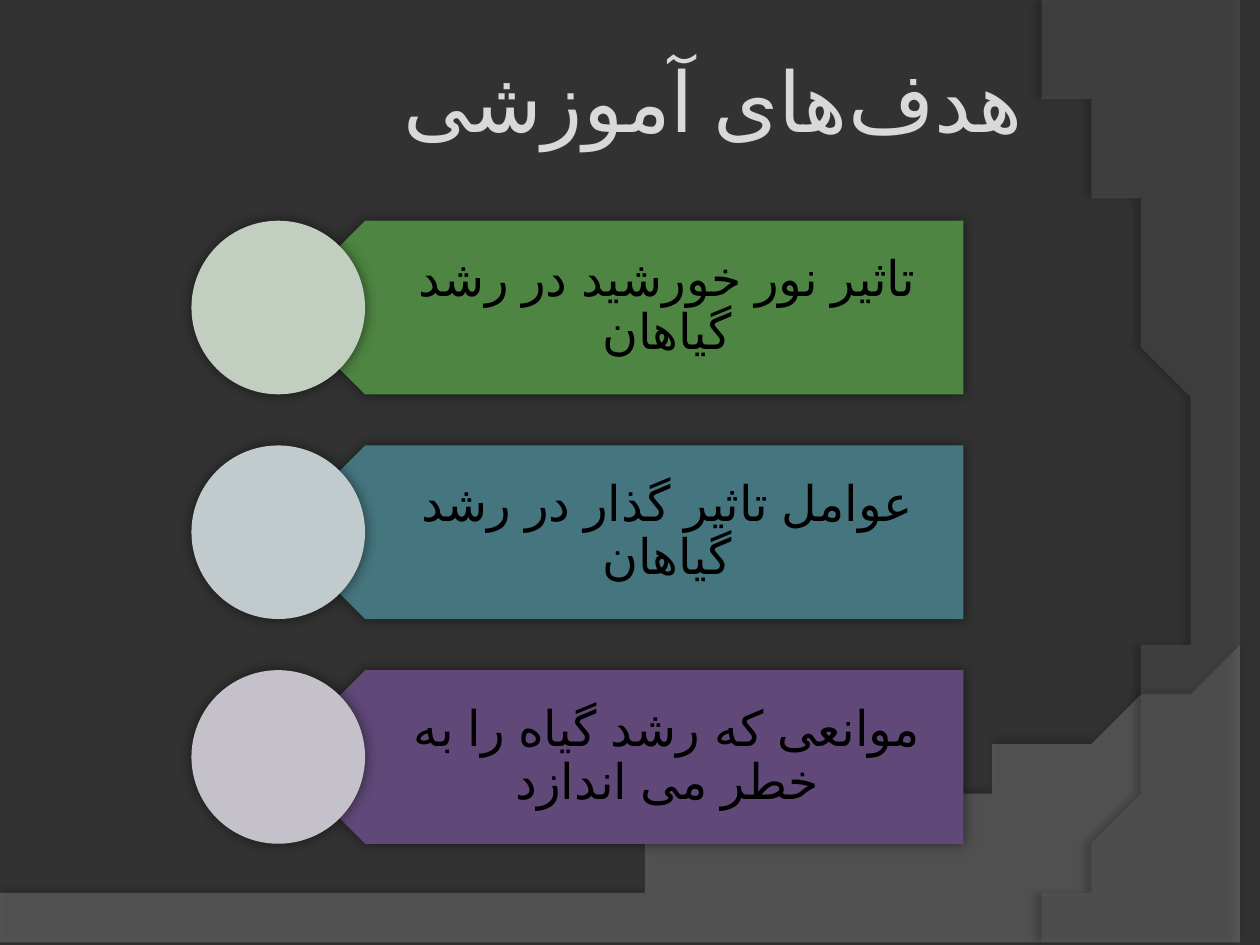
import pptx
import pptx.util
import pptx.dml.color
import pptx.enum.shapes
import pptx.enum.text
import pptx.oxml
import pptx.oxml.ns

Cm = pptx.util.Cm
SHAPE = pptx.enum.shapes.MSO_SHAPE
ALIGN = pptx.enum.text.PP_ALIGN
ANCHOR = pptx.enum.text.MSO_ANCHOR

# Content: text, arrow colour, circle colour
TITLE = "هدف\u200cهای آموزشی"
GOALS = [
    ("تاثیر نور خورشید در رشد گیاهان", "4E8542", "C2CEC0"),
    ("عوامل تاثیر گذار در رشد گیاهان", "45757E", "C1CACC"),
    ("موانعی که رشد گیاه را به خطر می اندازد", "604878", "C5C1CA"),
]
# Background waves in cm: straight corners, then a Bezier from the last corner
WAVES = [
    dict(corners=[(0, 17.91), (0, 19.07), (25.4, 19.07), (25.4, 13.21)],
         curve=[(14.2, 18.52), (9.93, 18.26), (0, 17.91)],
         color="7F7F7F", alpha=45, shadow=(35, 4, 3.5, 270)),
    dict(corners=[(25.4, 0.05), (25.4, 19.05), (20.85, 19.05)],
         curve=[(23.75, 15.72), (25.86, 7.62), (20.32, 0)],
         color="5E5E5E", alpha=40, shadow=(45, 4, 4, 180)),
]
GLOW = (50, 7.5, 0, 0)

# Goal rows in cm
TOP, PITCH, HEIGHT = 4.45, 4.53, 3.5
CIRCLE_X, ARROW_X, RIGHT = 3.86, 5.61, 19.42
TEXT_X = ARROW_X + HEIGHT / 4


def rgb(color):
    return pptx.dml.color.RGBColor.from_string(color)


def paint(sp, color, shadow, alpha=100):
    """Solid fill, no line, and a black shadow (alpha, blur, distance, angle)."""
    sp.fill.solid()
    sp.fill.fore_color.rgb = rgb(color)
    sp.line.fill.background()
    if alpha < 100:
        clr = sp.fill._xPr.find(".//" + pptx.oxml.ns.qn("a:srgbClr"))
        clr.append(pptx.oxml.parse_xml(
            f'<a:alpha {pptx.oxml.ns.nsdecls("a")} val="{alpha * 1000}"/>'))
    opacity, blur, dist, angle = shadow
    sp._element.spPr.append(pptx.oxml.parse_xml(
        f'<a:effectLst {pptx.oxml.ns.nsdecls("a")}>'
        f'<a:outerShdw blurRad="{int(blur * 12700)}" dist="{int(dist * 12700)}" '
        f'dir="{angle * 60000}" algn="ctr" rotWithShape="0"><a:srgbClr val="000000">'
        f'<a:alpha val="{opacity * 1000}"/></a:srgbClr></a:outerShdw></a:effectLst>'))


def write(sp, text, size, font, color, align, anchor, margins, spacing=1.0):
    """One right-to-left paragraph; margins are left, top, right, bottom in cm."""
    tf = sp.text_frame
    tf.word_wrap = True
    tf.auto_size = pptx.enum.text.MSO_AUTO_SIZE.NONE
    tf.vertical_anchor = anchor
    tf.margin_left, tf.margin_top, tf.margin_right, tf.margin_bottom = map(Cm, margins)
    p = tf.paragraphs[0]
    p.alignment = align
    p.line_spacing = spacing
    p._p.get_or_add_pPr().set("rtl", "1")
    r = p.add_run()
    r.text = text
    r.font.size = pptx.util.Pt(size)
    r.font.name = font
    r.font.color.rgb = rgb(color)
    r._r.get_or_add_rPr().set("lang", "fa-IR")
    r._r.rPr.append(pptx.oxml.parse_xml(
        f'<a:cs {pptx.oxml.ns.nsdecls("a")} typeface="{font}"/>'))


def bezier(points, steps=60):
    """Points along a cubic curve, without its start."""
    for i in range(1, steps + 1):
        t = i / steps
        weights = ((1 - t) ** 3, 3 * t * (1 - t) ** 2, 3 * t * t * (1 - t), t ** 3)
        yield tuple(sum(w * pt[k] for w, pt in zip(weights, points)) for k in (0, 1))


prs = pptx.Presentation()
prs.slide_width, prs.slide_height = Cm(25.4), Cm(19.05)
s = prs.slides.add_slide(prs.slide_layouts[5])
s.background.fill.solid()
s.background.fill.fore_color.rgb = rgb("323232")

# Background waves
for wave in WAVES:
    corners = wave["corners"]
    outline = corners + list(bezier([corners[-1]] + wave["curve"]))
    fb = s.shapes.build_freeform(*outline[0], scale=float(Cm(1)))
    fb.add_line_segments(outline[1:], close=True)
    paint(fb.convert_to_shape(), wave["color"], wave["shadow"], wave["alpha"])

# Title, brought in front of the waves
title = s.shapes.title
s.shapes._spTree.append(title._element)
title.left, title.top, title.width, title.height = map(Cm, (2.18, 0.99, 18.57, 3.18))
write(title, TITLE, 47.7, "Cabin", "D9D9D9", ALIGN.RIGHT, ANCHOR.TOP,
      (0.13, 0, 0.13, 0.13))

# Goals: arrow, text and circle in each row
for i, (text, arrow_color, circle_color) in enumerate(GOALS):
    y = Cm(TOP + i * PITCH)
    arrow = s.shapes.add_shape(SHAPE.PENTAGON, Cm(ARROW_X), y,
                               Cm(RIGHT - ARROW_X), Cm(HEIGHT))
    arrow.rotation = 180
    paint(arrow, arrow_color, GLOW)
    box = s.shapes.add_textbox(Cm(TEXT_X), y, Cm(RIGHT - TEXT_X), Cm(HEIGHT))
    write(box, text, 28, "Arial", "000000", ALIGN.CENTER, ANCHOR.MIDDLE,
          (1.55, 0.3, 0.56, 0.3), spacing=0.9)
    circle = s.shapes.add_shape(SHAPE.OVAL, Cm(CIRCLE_X), y, Cm(HEIGHT), Cm(HEIGHT))
    paint(circle, circle_color, GLOW)

prs.save("out.pptx")
